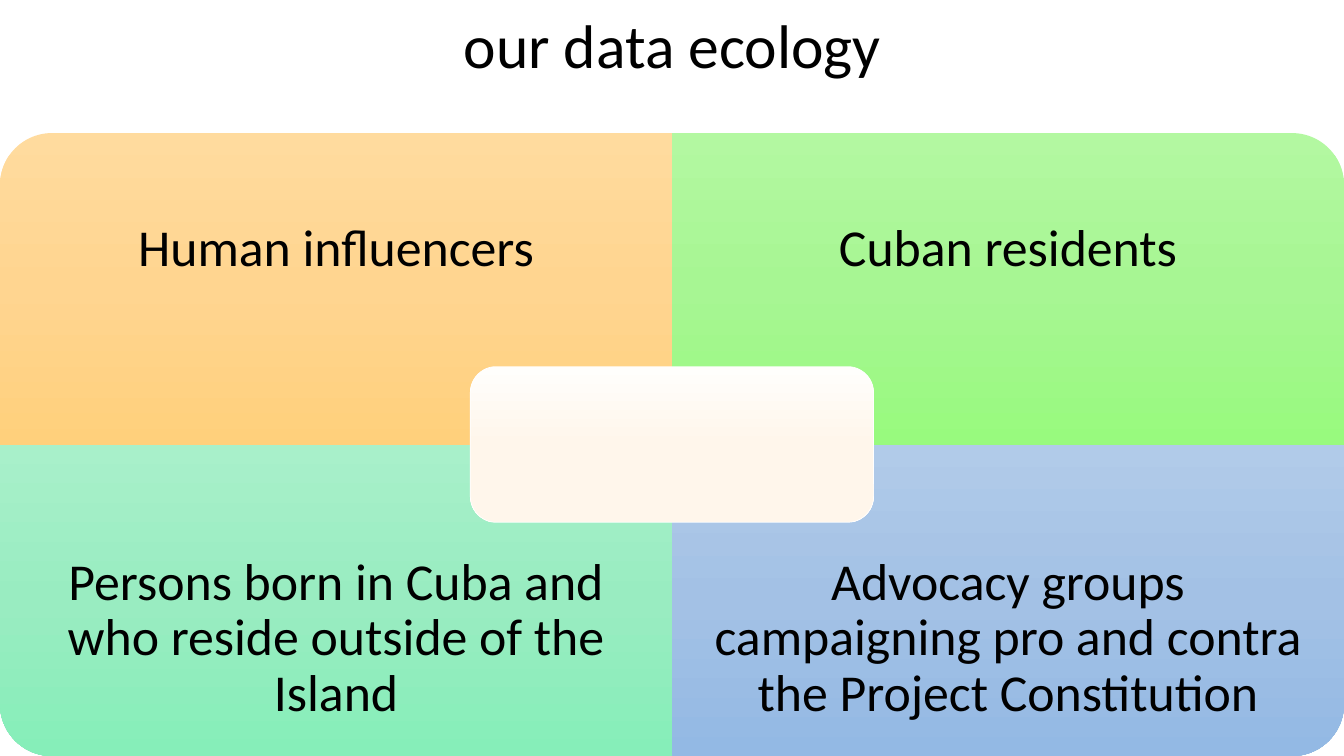
from copy import deepcopy
from dataclasses import dataclass

from pptx import Presentation
from pptx.dml.color import RGBColor
from pptx.enum.shapes import MSO_SHAPE
from pptx.enum.text import MSO_ANCHOR, MSO_AUTO_SIZE, PP_ALIGN
from pptx.oxml.ns import qn
from pptx.util import Inches, Pt


@dataclass(frozen=True)
class Theme:
    """Colours, font and type sizes of the slide."""
    font: str = "Calibri"
    title_size: int = 44
    label_size: int = 37
    text: str = "000000"
    outline: str = "FFFFFF"
    orange: tuple = ("FFDB9E", "FFD590", "FFD07C")
    green: tuple = ("B3F8A1", "A7F693", "98FA7E")
    mint: tuple = ("A8F0CA", "99ECC1", "86EEB9")
    blue: tuple = ("B1CBE9", "A3C1E5", "93B9E4")
    cream: tuple = ("FFFEFC", "FFF6EB", "FFF5E9")


THEME = Theme()
SLIDE_WIDTH, SLIDE_HEIGHT = 13.33, 7.5
MATRIX_TOP = 1.32
TILE_WIDTH = SLIDE_WIDTH / 2
TILE_HEIGHT = (SLIDE_HEIGHT - MATRIX_TOP) / 2
LABEL_HEIGHT = TILE_HEIGHT * 0.75
CENTRE_WIDTH, CENTRE_HEIGHT = 4, TILE_HEIGHT / 2

QUADRANTS = (
    (0, 0, 270, THEME.orange, "Human influencers"),
    (0, 1, 0, THEME.green, "Cuban residents"),
    (1, 0, 180, THEME.mint, "Persons born in Cuba and who reside outside of the Island"),
    (1, 1, 90, THEME.blue,
     "Advocacy groups campaigning pro and contra the Project Constitution"),
)


def write_text(frame, text, size):
    """Fill a text frame with one centred paragraph."""
    frame.text = text
    frame.word_wrap = True
    frame.auto_size = MSO_AUTO_SIZE.NONE
    frame.vertical_anchor = MSO_ANCHOR.MIDDLE
    para = frame.paragraphs[0]
    para.alignment = PP_ALIGN.CENTER
    para.line_spacing = 0.9
    font = para.runs[0].font
    font.name = THEME.font
    font.size = Pt(size)
    font.color.rgb = RGBColor.from_string(THEME.text)


def fill_gradient(shape, colours):
    """Shade a shape from top to bottom, whatever its rotation."""
    shape.fill.gradient()
    shape.fill.gradient_angle = 270
    gradient = shape._element.spPr.find(qn("a:gradFill"))
    gradient.set("rotWithShape", "0")
    stops = gradient.find(qn("a:gsLst"))
    stops.insert(1, deepcopy(stops[0]))
    for index, (stop, colour) in enumerate(zip(shape.fill.gradient_stops, colours)):
        stop.position = index / 2
        stop.color.rgb = RGBColor.from_string(colour)


def add_panel(slide, kind, centre_x, centre_y, width, height, colours):
    """Add a gradient panel around a centre point."""
    panel = slide.shapes.add_shape(
        kind, Inches(centre_x - width / 2), Inches(centre_y - height / 2),
        Inches(width), Inches(height))
    panel.shadow.inherit = False
    panel.line.fill.background()
    fill_gradient(panel, colours)
    return panel


def add_quadrant(slide, row, column, rotation, colours, text):
    """Add one tile with its rounded outer corner and its label."""
    left = column * TILE_WIDTH
    top = MATRIX_TOP + row * TILE_HEIGHT
    size = (TILE_HEIGHT, TILE_WIDTH) if rotation % 180 else (TILE_WIDTH, TILE_HEIGHT)
    tile = add_panel(slide, MSO_SHAPE.ROUND_1_RECTANGLE, left + TILE_WIDTH / 2,
                     top + TILE_HEIGHT / 2, *size, colours)
    tile.rotation = rotation
    label_top = top + row * (TILE_HEIGHT - LABEL_HEIGHT)
    label = slide.shapes.add_textbox(Inches(left), Inches(label_top),
                                     Inches(TILE_WIDTH), Inches(LABEL_HEIGHT))
    frame = label.text_frame
    frame.margin_left = frame.margin_right = Inches(0.29)
    frame.margin_top = frame.margin_bottom = Inches(0.29)
    write_text(frame, text, THEME.label_size)


def add_title(slide, text):
    """Place and format the slide title."""
    title = slide.shapes.title
    title.left, title.top = Inches(0.92), Inches(0)
    title.width, title.height = Inches(11.5), Inches(0.97)
    write_text(title.text_frame, text, THEME.title_size)


def main():
    """Build the slide and save the deck."""
    deck = Presentation()
    deck.slide_width, deck.slide_height = Inches(SLIDE_WIDTH), Inches(SLIDE_HEIGHT)
    slide = deck.slides.add_slide(deck.slide_layouts[5])
    add_title(slide, "our data ecology")
    for quadrant in QUADRANTS:
        add_quadrant(slide, *quadrant)
    centre = add_panel(slide, MSO_SHAPE.ROUNDED_RECTANGLE, TILE_WIDTH,
                       MATRIX_TOP + TILE_HEIGHT, CENTRE_WIDTH, CENTRE_HEIGHT, THEME.cream)
    centre.line.color.rgb = RGBColor.from_string(THEME.outline)
    centre.line.width = Pt(0.5)
    deck.save("out.pptx")


if __name__ == "__main__":
    main()
